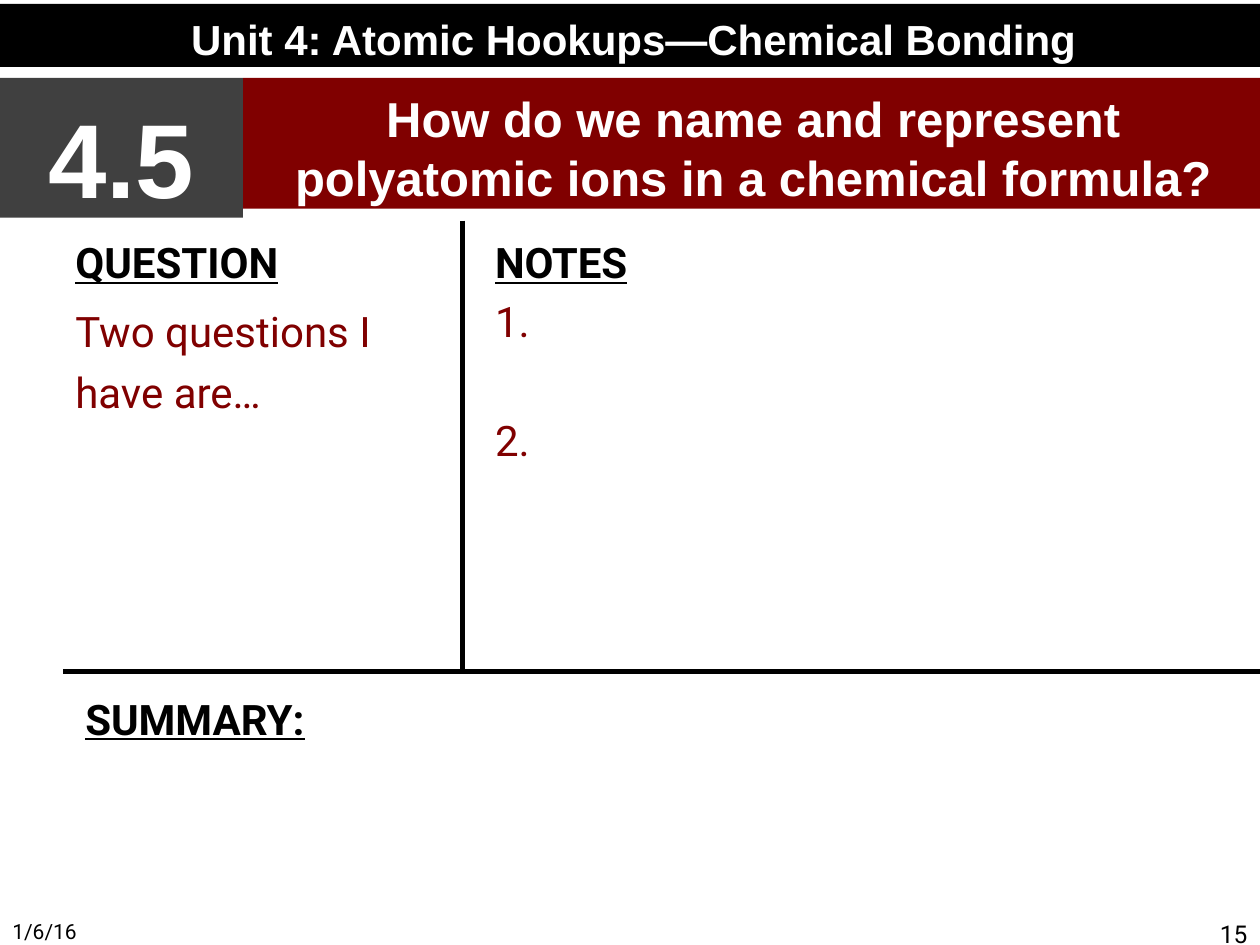
from dataclasses import dataclass

from lxml.etree import SubElement
from pptx import Presentation
from pptx.dml.color import RGBColor
from pptx.enum.shapes import MSO_CONNECTOR, MSO_SHAPE
from pptx.enum.text import MSO_ANCHOR, PP_ALIGN
from pptx.oxml.ns import qn
from pptx.util import Cm, Pt


@dataclass(frozen=True)
class Theme:
    black: RGBColor = RGBColor(0x00, 0x00, 0x00)
    white: RGBColor = RGBColor(0xFF, 0xFF, 0xFF)
    gray: RGBColor = RGBColor(0x40, 0x40, 0x40)
    maroon: RGBColor = RGBColor(0x80, 0x00, 0x00)
    banner_font: str = "Arial"
    body_font: str = "Roboto"
    lesson: int = 60
    topic: int = 28
    body: int = 24
    page: int = 14
    date: int = 12
    rule: int = 3


theme = Theme()


def prepare_frame(shape, size):
    """Wrap the text and set its top inset in proportion to the type size."""
    frame = shape.text_frame
    frame.word_wrap = True
    frame.vertical_anchor = MSO_ANCHOR.TOP
    frame.margin_top = Cm(0.13 + 0.003 * size)
    return frame


def add_text(paragraph, text, font, size, color, bold=False, underline=False):
    run = paragraph.add_run()
    run.text = text
    run.font.name = font
    run.font.size = Pt(size)
    run.font.color.rgb = color
    run.font.bold = bold
    run.font.underline = underline


prs = Presentation()
prs.slide_width, prs.slide_height = Cm(25.4), Cm(19.05)
slide = prs.slides.add_slide(prs.slide_layouts[6])

# Footer: date and page number
for left, text, size, align in (
    (0, "1/6/16", theme.date, PP_ALIGN.LEFT),
    (19.48, "15", theme.page, PP_ALIGN.RIGHT),
):
    footer = slide.shapes.add_textbox(Cm(left), Cm(18.36), Cm(5.92), Cm(0.69))
    paragraph = prepare_frame(footer, size).paragraphs[0]
    paragraph.alignment = align
    add_text(paragraph, text, theme.body_font, size, theme.black)

# Banners: unit, lesson number and lesson question
for left, top, width, height, fill, size, text in (
    (0, 0.08, 25.55, 1.27, theme.black, theme.body,
     "Unit 4: Atomic Hookups—Chemical Bonding"),
    (0, 1.57, 4.9, 2.82, theme.gray, theme.lesson, "4.5"),
    (4.9, 1.57, 20.57, 2.64, theme.maroon, theme.topic,
     "How do we name and represent polyatomic ions in a chemical formula?"),
):
    banner = slide.shapes.add_shape(
        MSO_SHAPE.RECTANGLE, Cm(left), Cm(top), Cm(width), Cm(height))
    banner.shadow.inherit = False
    banner.fill.solid()
    banner.fill.fore_color.rgb = fill
    banner.line.fill.background()
    paragraph = prepare_frame(banner, size).paragraphs[0]
    paragraph.alignment = PP_ALIGN.CENTER
    add_text(paragraph, text, theme.banner_font, size, theme.white, bold=True)

# Writing areas: heading, then entries as (text, space before, line spacing)
for left, top, width, height, heading, entries in (
    (1.27, 4.57, 8.05, 8.76, "QUESTION", [("Two questions I have are…", 5, 1.2)]),
    (9.73, 4.57, 15.67, 8.76, "NOTES", [("1.", 5, 1.0), ("2.", 39, 1.0)]),
    (1.47, 13.77, 23.93, 5.28, "SUMMARY:", []),
):
    area = slide.shapes.add_textbox(Cm(left), Cm(top), Cm(width), Cm(height))
    frame = prepare_frame(area, theme.body)
    add_text(frame.paragraphs[0], heading, theme.body_font, theme.body,
             theme.black, bold=True, underline=True)
    for text, space_before, line_spacing in entries:
        paragraph = frame.add_paragraph()
        paragraph.space_before = Pt(space_before)
        paragraph.line_spacing = line_spacing
        add_text(paragraph, text, theme.body_font, theme.body, theme.maroon)

# Dividers between the writing areas
for x1, y1, x2, y2 in ((9.32, 4.45, 9.32, 13.54), (25.4, 13.54, 1.27, 13.54)):
    divider = slide.shapes.add_connector(
        MSO_CONNECTOR.STRAIGHT, Cm(x1), Cm(y1), Cm(x2), Cm(y2))
    divider.line.color.rgb = theme.black
    divider.line.width = Pt(theme.rule)
    SubElement(divider._element.spPr, qn("a:effectLst"))

prs.save("out.pptx")
